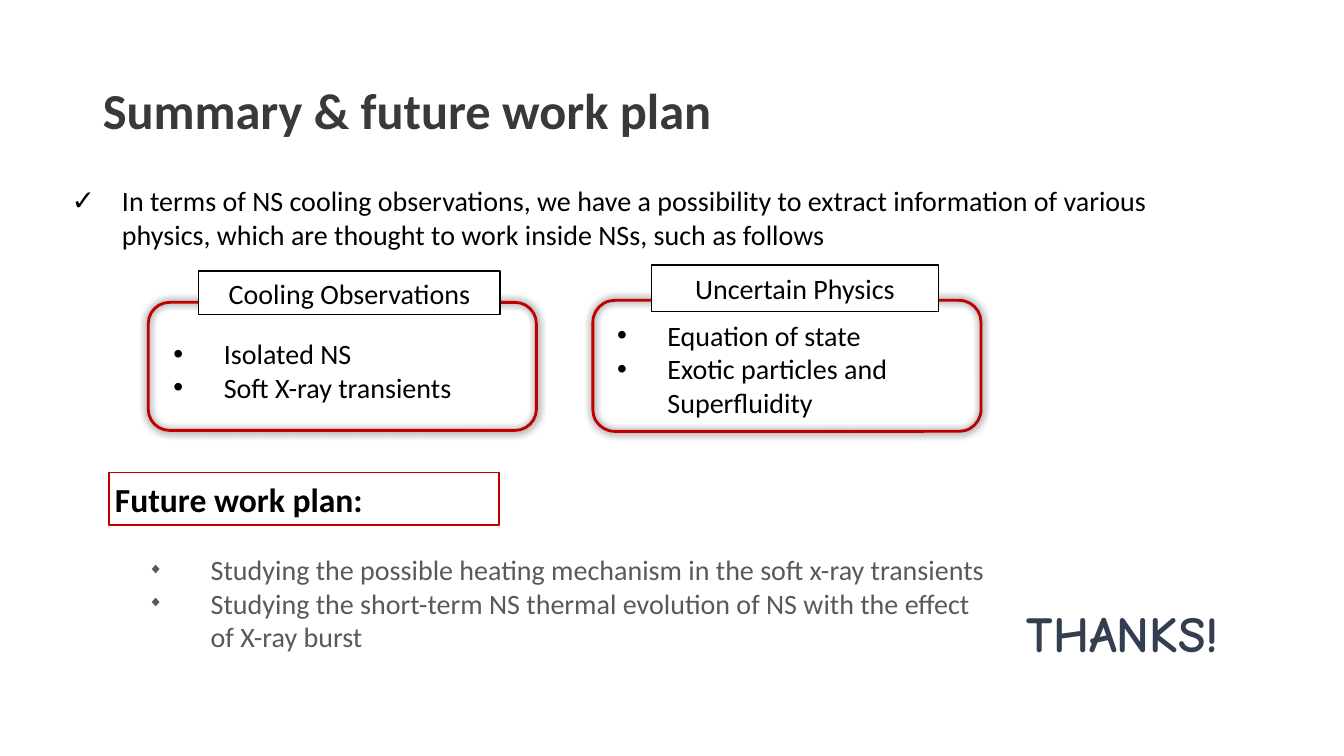
from typing import NamedTuple

from lxml.etree import SubElement
from pptx import Presentation
from pptx.dml.color import RGBColor
from pptx.enum.shapes import MSO_SHAPE
from pptx.enum.text import MSO_ANCHOR, MSO_AUTO_SIZE, PP_ALIGN
from pptx.oxml.ns import qn
from pptx.util import Inches, Pt

BLACK = RGBColor(0, 0, 0)
WHITE = RGBColor(255, 255, 255)
RED = RGBColor(0xC0, 0, 0)
DARK = RGBColor(0x3B, 0x38, 0x38)
GREY = RGBColor(0x59, 0x59, 0x59)
NAVY = RGBColor(0x33, 0x3F, 0x50)


class Box(NamedTuple):
    """A place on the slide, in inches."""
    left: float
    top: float
    width: float
    height: float


class Mark(NamedTuple):
    """A bullet with its hanging indent and size in percent."""
    sign: str
    hang: float = 0.5
    scale: int = 100


class Panel(NamedTuple):
    """A framed list under a heading."""
    slot: int
    head: str
    tag: Box
    frame: Box
    list: Box
    lines: list[str]


PANELS = [
    Panel(2, "Cooling Observations", Box(1.97, 2.69, 2.99, 0.43),
          Box(1.47, 3, 3.85, 1.27), Box(1.66, 3.07, 3.4, 1.21),
          ["Isolated NS", "Soft X-ray transients"]),
    Panel(4, "Uncertain Physics", Box(6.46, 2.63, 2.85, 0.46),
          Box(5.88, 2.98, 3.85, 1.3), Box(6.06, 3.25, 3.2, 0.81),
          ["Equation of state", "Exotic particles and Superfluidity"]),
]


def place(shape, box: Box) -> None:
    """Move and size a shape."""
    shape.left, shape.top, shape.width, shape.height = map(Inches, box)


def add_mark(para, mark: Mark) -> None:
    """Give a paragraph its bullet."""
    props = para._p.get_or_add_pPr()
    props.set("marL", str(Inches(mark.hang)))
    props.set("indent", str(-Inches(mark.hang)))
    SubElement(props, qn("a:buSzPct"), val=str(mark.scale * 1000))
    SubElement(props, qn("a:buFont"), typeface="Arial")
    SubElement(props, qn("a:buChar"), char=mark.sign)


def write(shape, *lines: str, size: int = 20, color: RGBColor = BLACK,
          bold: bool = False, font: str = "Calibri", align=PP_ALIGN.LEFT,
          anchor=MSO_ANCHOR.MIDDLE, inset: float = 0.06, wrap: bool = True,
          pitch: float = 1.0, mark: Mark | None = None) -> None:
    """Fill a shape with formatted paragraphs."""
    frame = shape.text_frame
    frame.auto_size = MSO_AUTO_SIZE.NONE
    frame.word_wrap = wrap
    frame.vertical_anchor = anchor
    frame.margin_left = frame.margin_right = Inches(inset)
    frame.margin_top = frame.margin_bottom = Inches(inset)
    for num, line in enumerate(lines):
        para = frame.add_paragraph() if num else frame.paragraphs[0]
        if mark:
            add_mark(para, mark)
        para.alignment = align
        para.line_spacing = pitch
        para.space_before = para.space_after = Pt(0)
        run = para.add_run()
        run.text = line
        run.font.name, run.font.size = font, Pt(size)
        run.font.bold, run.font.color.rgb = bold, color


def add_box(slide, box: Box, line: RGBColor, width: float = 1,
            kind=MSO_SHAPE.RECTANGLE, fill: RGBColor | None = None):
    """Draw an outlined shape without shadow."""
    shape = slide.shapes.add_shape(kind, *map(Inches, box))
    shape.shadow.inherit = False
    shape.line.color.rgb, shape.line.width = line, Pt(width)
    if fill is None:
        shape.fill.background()
    else:
        shape.fill.solid()
        shape.fill.fore_color.rgb = fill
    return shape


def add_glow(shape) -> None:
    """Add a soft shadow all round a shape."""
    effects = shape._element.spPr.find(qn("a:effectLst"))
    glow = SubElement(effects, qn("a:outerShdw"), blurRad=str(Pt(6)),
                      dist="0", dir="18900000", algn="ctr", rotWithShape="0")
    tint = SubElement(glow, qn("a:srgbClr"), val=str(BLACK))
    SubElement(tint, qn("a:alpha"), val="80000")


def add_panel(slide, panel: Panel) -> None:
    """Draw a framed list with its heading."""
    body = slide.placeholders[panel.slot]
    place(body, panel.list)
    write(body, *panel.lines, mark=Mark("•"))
    add_glow(add_box(slide, panel.frame, RED, 2, MSO_SHAPE.ROUNDED_RECTANGLE))
    tag = add_box(slide, panel.tag, BLACK, fill=WHITE)
    write(tag, panel.head, align=PP_ALIGN.CENTER)


def main() -> None:
    """Build and save the slide."""
    deck = Presentation()
    deck.slide_width, deck.slide_height = Inches(13.33), Inches(7.5)
    slide = deck.slides.add_slide(deck.slide_layouts[4])

    title = slide.shapes.title
    place(title, Box(0.92, 0.4, 11.5, 1.45))
    write(title, "Summary & future work plan", size=36, color=DARK,
          bold=True, inset=0.1, pitch=0.9)

    intro = slide.placeholders[1]
    place(intro, Box(0.65, 1.76, 11.61, 0.79))
    write(intro, "In terms of NS cooling observations, we have a possibility "
          "to extract information of various physics, which are thought to "
          "work inside NSs, such as follows", mark=Mark("✓"))

    for panel in PANELS:
        add_panel(slide, panel)

    label = add_box(slide, Box(1.08, 4.69, 3.87, 0.52), RED)
    write(label, "Future work plan:", size=24, bold=True)

    plan = slide.placeholders[3]
    place(plan, Box(1.41, 5.42, 8.53, 1.12))
    write(plan,
          "Studying the possible heating mechanism in the soft x-ray transients",
          "Studying the short-term NS thermal evolution of NS with the effect "
          "of X-ray burst",
          color=GREY, anchor=MSO_ANCHOR.TOP, mark=Mark("◆", 0.62, 54))

    thanks = slide.shapes.add_textbox(*map(Inches, Box(9.95, 5.93, 2.37, 0.68)))
    write(thanks, "THANKS!", size=36, color=NAVY, bold=True,
          font="Comic Neue", align=PP_ALIGN.CENTER, inset=0.04, wrap=False)
    deck.save("out.pptx")


if __name__ == "__main__":
    main()
